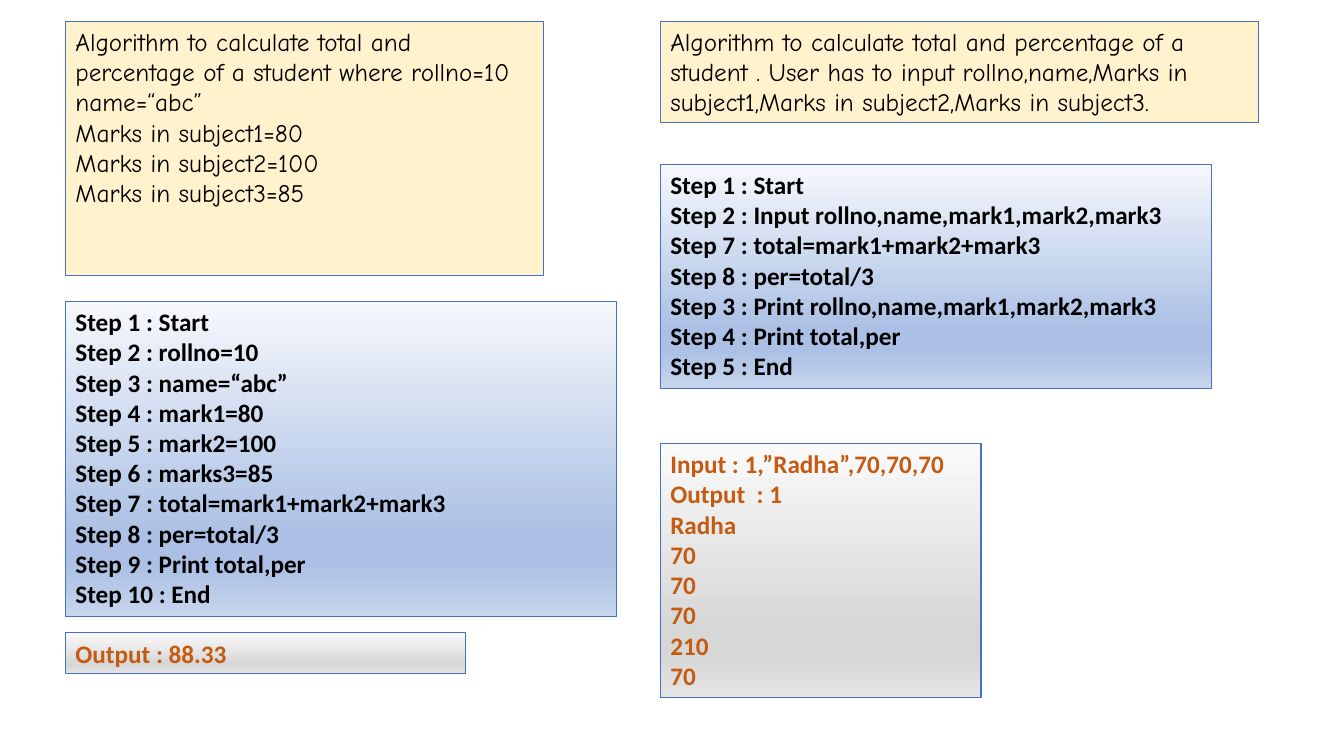
from lxml import etree
from pptx import Presentation
from pptx.dml.color import RGBColor
from pptx.enum.text import MSO_AUTO_SIZE
from pptx.oxml.ns import qn
from pptx.util import Inches, Pt

BLACK = RGBColor(0x00, 0x00, 0x00)
ORANGE = RGBColor(0xC5, 0x5A, 0x11)
OUTLINE = RGBColor(0x44, 0x72, 0xC4)
CREAM = RGBColor(0xFF, 0xF2, 0xCC)
BLUES = [RGBColor(0xF6, 0xF8, 0xFC), RGBColor(0xAB, 0xC0, 0xE4),
         RGBColor(0xAB, 0xC0, 0xE4), RGBColor(0xC7, 0xD5, 0xED)]
GREYS = [RGBColor(0xFA, 0xFA, 0xFA), RGBColor(0xD7, 0xD7, 0xD7),
         RGBColor(0xD7, 0xD7, 0xD7), RGBColor(0xE4, 0xE4, 0xE4)]
STOPS = [0, 74, 83, 100]  # percent, from top to bottom

# Kind of box: fill colours, font, text colour, bold
STYLES = {
    "task": ([CREAM], "Comic Neue", BLACK, False),
    "steps": (BLUES, "Calibri", BLACK, True),
    "output": (GREYS, "Calibri", ORANGE, True),
}
LEFT, RIGHT = 0.65, 6.55  # the two columns

# Kind, left, top, width, height, lines
BOXES = [
    ("task", LEFT, 0.21, 4.74, 2.52, [
        "Algorithm to calculate total and percentage of a student where rollno=10",
        "name=“abc”",
        "Marks in subject1=80",
        "Marks in subject2=100",
        "Marks in subject3=85"]),
    ("steps", LEFT, 2.99, 5.47, 3.13, [
        "Step 1 : Start",
        "Step 2 : rollno=10",
        "Step 3 : name=“abc”",
        "Step 4 : mark1=80",
        "Step 5 : mark2=100",
        "Step 6 : marks3=85",
        "Step 7 : total=mark1+mark2+mark3",
        "Step 8 : per=total/3",
        "Step 9 : Print total,per",
        "Step 10 : End"]),
    ("output", LEFT, 6.28, 3.97, 0.4, ["Output : 88.33"]),
    ("task", RIGHT, 0.21, 5.93, 1.01, [
        "Algorithm to calculate total and percentage of a student . User has to "
        "input rollno,name,Marks in subject1,Marks in subject2,Marks in subject3."]),
    ("steps", RIGHT, 1.63, 5.47, 2.22, [
        "Step 1 : Start",
        "Step 2 : Input rollno,name,mark1,mark2,mark3",
        "Step 7 : total=mark1+mark2+mark3",
        "Step 8 : per=total/3",
        "Step 3 : Print rollno,name,mark1,mark2,mark3",
        "Step 4 : Print total,per",
        "Step 5 : End"]),
    ("output", RIGHT, 4.4, 3.18, 2.52, [
        "Input : 1,”Radha”,70,70,70",
        "Output  : 1",
        "Radha", "70", "70", "70", "210", "70"]),
]


def fill_gradient(shape, colors):
    """Fill a shape from top to bottom with one colour per stop."""
    shape.fill.gradient()
    shape.fill.gradient_angle = 270
    stop_list = shape.fill._xPr.find(qn("a:gradFill")).find(qn("a:gsLst"))
    for old_stop in list(stop_list):
        stop_list.remove(old_stop)
    for percent, color in zip(STOPS, colors):
        stop = etree.SubElement(stop_list, qn("a:gs"), pos=str(percent * 1000))
        etree.SubElement(stop, qn("a:srgbClr"), val=str(color))


deck = Presentation()
deck.slide_width, deck.slide_height = Inches(13.33), Inches(7.5)
page = deck.slides.add_slide(deck.slide_layouts[6])

for kind, left, top, width, height, lines in BOXES:
    colors, font_name, text_color, bold = STYLES[kind]

    # Box with its fill and outline
    box = page.shapes.add_textbox(Inches(left), Inches(top), Inches(width), Inches(height))
    if len(colors) == 1:
        box.fill.solid()
        box.fill.fore_color.rgb = colors[0]
    else:
        fill_gradient(box, colors)
    box.line.color.rgb = OUTLINE
    box.line.width = Pt(0.75)

    # Text, one paragraph per line
    frame = box.text_frame
    frame.word_wrap = True
    frame.auto_size = MSO_AUTO_SIZE.SHAPE_TO_FIT_TEXT
    frame.text = "\n".join(lines)
    for para in frame.paragraphs:
        para.font.name = font_name
        para.font.size = Pt(18)
        para.font.bold = bold
        para.font.color.rgb = text_color

deck.save("out.pptx")
